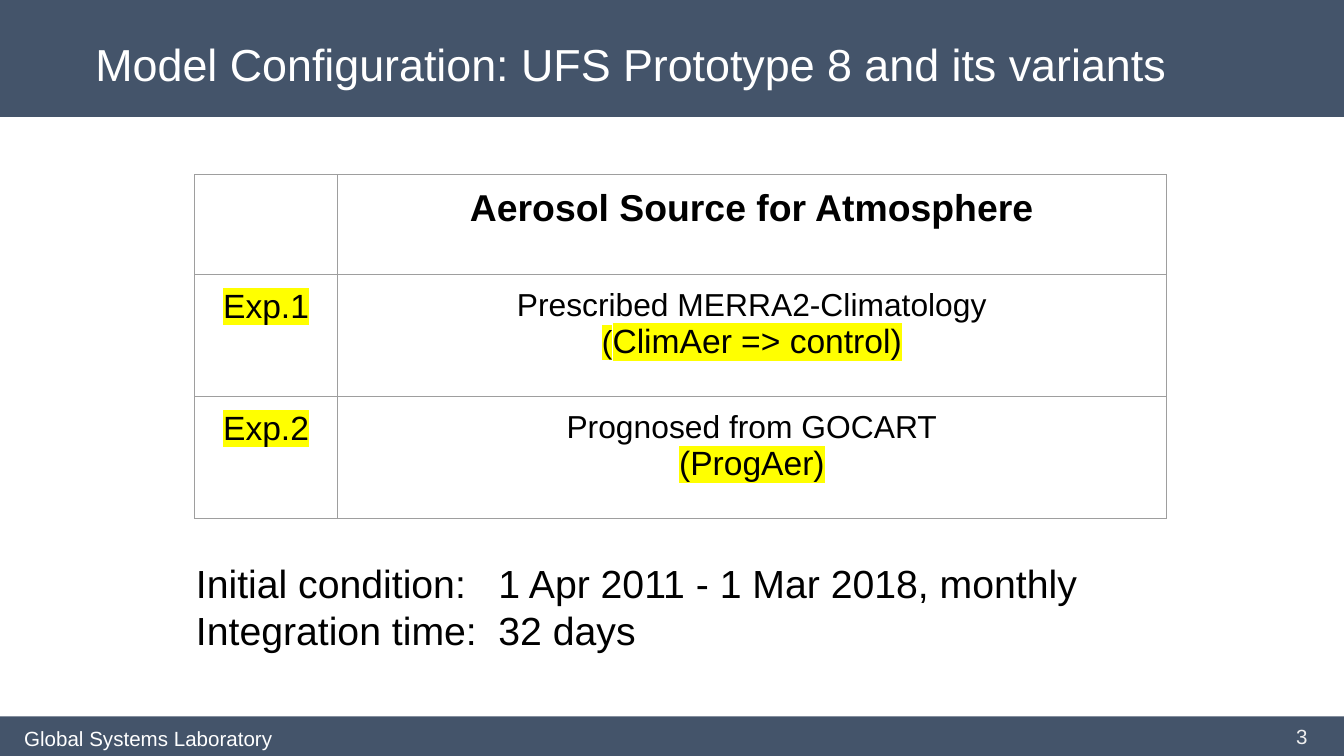
from dataclasses import dataclass

from lxml import etree
from pptx import Presentation
from pptx.dml.color import RGBColor
from pptx.enum.shapes import MSO_SHAPE
from pptx.enum.text import MSO_ANCHOR, MSO_AUTO_SIZE, PP_ALIGN
from pptx.oxml.ns import qn
from pptx.util import Inches, Pt

LEFT, CENTER, RIGHT = PP_ALIGN.LEFT, PP_ALIGN.CENTER, PP_ALIGN.RIGHT
TOP, MIDDLE = MSO_ANCHOR.TOP, MSO_ANCHOR.MIDDLE
RECTANGLE = MSO_SHAPE.RECTANGLE
NO_AUTOFIT = MSO_AUTO_SIZE.NONE

FONT = "Arial"
COLORS = {
    "band": "44546A",
    "white": "FFFFFF",
    "page": "EFEFEF",
    "text": "000000",
    "border": "9E9E9E",
    "highlight": "FFFF00",
}
SLIDE_WIDTH = 10
SLIDE_HEIGHT = SLIDE_WIDTH * 9 / 16
FOOTER_TOP = 5.33


@dataclass(frozen=True)
class Box:
    left: float
    top: float
    width: float
    height: float

    def lengths(self) -> tuple:
        return tuple(Inches(n) for n in (self.left, self.top, self.width, self.height))


@dataclass(frozen=True)
class Span:
    text: str
    size: float
    marked: bool = False
    bold: bool = False


@dataclass(frozen=True)
class Experiment:
    label: str
    source: str
    short_name: tuple[Span, ...]


EXPERIMENTS = (
    Experiment("Exp.1", "Prescribed MERRA2-Climatology",
               (Span("(", 17, True), Span("ClimAer => control)", 18, True))),
    Experiment("Exp.2", "Prognosed from GOCART", (Span("(ProgAer)", 18, True),)),
)


def write_text(frame, lines, *, color="text", align=LEFT, tab=None) -> None:
    for index, spans in enumerate(lines):
        paragraph = frame.paragraphs[0] if index == 0 else frame.add_paragraph()
        paragraph.alignment = align
        if tab is not None:
            tabs = etree.SubElement(paragraph._p.get_or_add_pPr(), qn("a:tabLst"))
            etree.SubElement(tabs, qn("a:tab"), pos=str(Inches(tab)), algn="l")
        for span in spans:
            run = paragraph.add_run()
            run.text = span.text
            run.font.size = Pt(span.size)
            run.font.bold = span.bold
            run.font.name = FONT
            run.font.color.rgb = RGBColor.from_string(COLORS[color])
            if span.marked:
                mark = etree.Element(qn("a:highlight"))
                etree.SubElement(mark, qn("a:srgbClr"), val=COLORS["highlight"])
                run._r.rPr.find(qn("a:solidFill")).addnext(mark)


def set_frame(frame, *, side=0.1, vertical=0.1, anchor=TOP) -> None:
    frame.word_wrap = True
    frame.auto_size = NO_AUTOFIT
    frame.vertical_anchor = anchor
    frame.margin_left = frame.margin_right = Inches(side)
    frame.margin_top = frame.margin_bottom = Inches(vertical)


def add_band(slide, box: Box) -> None:
    band = slide.shapes.add_shape(RECTANGLE, *box.lengths())
    band.shadow.inherit = False
    band.fill.solid()
    band.fill.fore_color.rgb = RGBColor.from_string(COLORS["band"])
    band.line.fill.background()


def add_label(slide, box: Box, lines, *, side=0.1, vertical=0.1, anchor=TOP, **text_format) -> None:
    frame = slide.shapes.add_textbox(*box.lengths()).text_frame
    set_frame(frame, side=side, vertical=vertical, anchor=anchor)
    write_text(frame, lines, **text_format)


def style_cell(cell) -> None:
    cell.margin_left = cell.margin_right = Inches(0.1)
    cell.margin_top = cell.margin_bottom = Inches(0.1)
    properties = cell._tc.get_or_add_tcPr()
    for side in ("lnL", "lnR", "lnT", "lnB"):
        border = etree.SubElement(properties, qn(f"a:{side}"), w=str(Pt(0.75)))
        fill = etree.SubElement(border, qn("a:solidFill"))
        etree.SubElement(fill, qn("a:srgbClr"), val=COLORS["border"])
    cell.fill.background()


def add_experiment_table(slide) -> None:
    widths, heights = (1.06, 6.17), (0.74, 0.91, 0.91)
    box = Box(1.45, 1.3, sum(widths), sum(heights))
    table = slide.shapes.add_table(len(heights), len(widths), *box.lengths()).table
    for column, width in zip(table.columns, widths):
        column.width = Inches(width)
    for row, height in zip(table.rows, heights):
        row.height = Inches(height)
    contents = [((), ((Span("Aerosol Source for Atmosphere", 20, bold=True),),))]
    contents += [
        (((Span(exp.label, 18, True),),), ((Span(exp.source, 17),), exp.short_name))
        for exp in EXPERIMENTS
    ]
    for row, row_contents in zip(table.rows, contents):
        for cell, lines in zip(row.cells, row_contents):
            style_cell(cell)
            write_text(cell.text_frame, lines, align=CENTER)


def add_title(slide, text: str) -> None:
    title = slide.shapes.title
    title.left, title.top, title.width, title.height = Box(0.61, 0.17, 8.32, 0.61).lengths()
    set_frame(title.text_frame)
    write_text(title.text_frame, ((Span(text, 24),),), color="white")
    title.element.getparent().append(title.element)


def main() -> None:
    presentation = Presentation()
    presentation.slide_width = Inches(SLIDE_WIDTH)
    presentation.slide_height = Inches(SLIDE_HEIGHT)
    slide = presentation.slides.add_slide(presentation.slide_layouts[5])

    add_band(slide, Box(0, FOOTER_TOP, SLIDE_WIDTH, SLIDE_HEIGHT - FOOTER_TOP))
    add_band(slide, Box(0, 0, SLIDE_WIDTH, 0.87))
    add_label(slide, Box(7.55, FOOTER_TOP, 2.25, 0.3), ((Span("3", 11),),),
              side=0.07, vertical=0.04, anchor=MIDDLE, color="page", align=RIGHT)
    add_label(slide, Box(0.11, FOOTER_TOP, 2.36, 0.34),
              ((Span("Global Systems Laboratory", 11),),),
              side=0.07, vertical=0.07, color="white")
    add_experiment_table(slide)
    run_settings = ("Initial condition:\t1 Apr 2011 - 1 Mar 2018, monthly",
                    "Integration time:\t32 days")
    add_label(slide, Box(1.36, 4.06, 7.28, 0.91),
              [(Span(setting, 21),) for setting in run_settings], tab=2.25)
    add_title(slide, "Model Configuration: UFS Prototype 8 and its variants")

    presentation.save("out.pptx")


if __name__ == "__main__":
    main()
